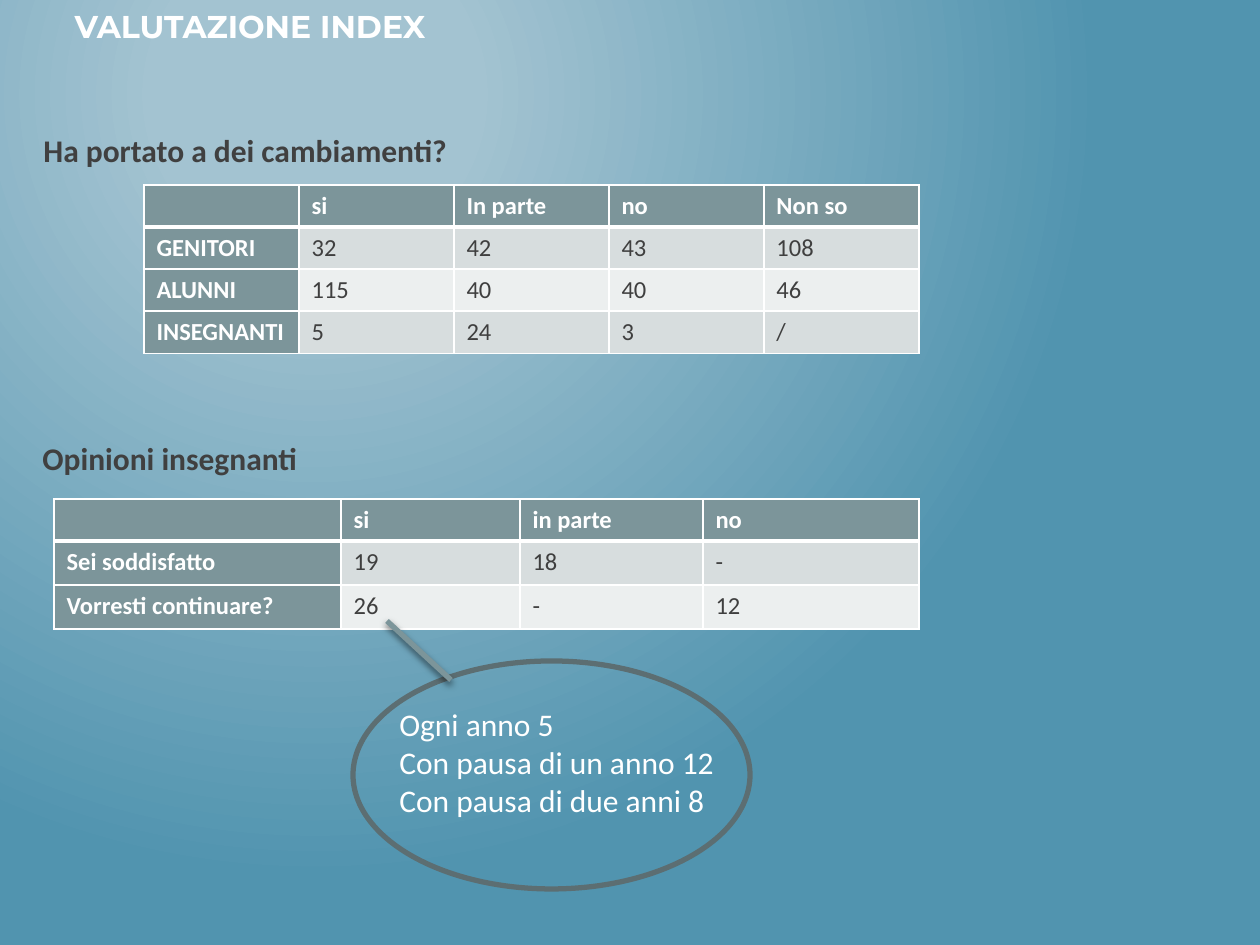
from dataclasses import dataclass

from lxml.etree import SubElement
from pptx import Presentation
from pptx.dml.color import RGBColor
from pptx.enum.shapes import MSO_CONNECTOR as Connector, MSO_SHAPE as Shape
from pptx.enum.text import MSO_ANCHOR as Anchor, PP_ALIGN as Align
from pptx.oxml.ns import qn
from pptx.util import Pt


@dataclass(frozen=True)
class Theme:
    title_font: str = "Montserrat"
    body_font: str = "Calibri"
    large: int = 18
    small: int = 14
    thin: int = 1
    thick: int = 3
    glow: str = "A3C3D1"
    backdrop: str = "5194AF"
    white: str = "FFFFFF"
    heading: str = "404040"
    value: str = "3F3F3F"
    header: str = "7C959A"
    bands: tuple = ("D7DDDE", "ECEFEF")
    outline: str = "5C6E72"
    shadow: str = "000000"


THEME = Theme()
PX = 914400 // 126
SLIDE_SIZE = (1260, 945)

TITLE = ("VALUTAZIONE INDEX", (62, 1, 1134, 113))
HEADINGS = [
    ("Ha portato a dei cambiamenti?", (31, 125, 1145, 263)),
    ("Opinioni insegnanti", (30, 433, 1145, 263)),
]
TABLES = [
    {
        "origin": (144, 185),
        "columns": [155] * 5,
        "rows": [42] * 4,
        "cells": [
            ["", "si", "In parte", "no", "Non so"],
            ["GENITORI", "32", "42", "43", "108"],
            ["ALUNNI", "115", "40", "40", "46"],
            ["INSEGNANTI", "5", "24", "3", "/"],
        ],
    },
    {
        "origin": (54, 499),
        "columns": [287, 179, 183, 216],
        "rows": [42, 44, 44],
        "cells": [
            ["", "si", "in parte", "no"],
            ["Sei soddisfatto", "19", "18", "-"],
            ["Vorresti continuare?", "26", "-", "12"],
        ],
    },
]
CALLOUT = (
    "Ogni anno 5\nCon pausa di un anno 12\nCon pausa di due anni 8",
    (387, 699, 367, 127),
)
ELLIPSE = (353, 661, 397, 228)
POINTER = (451, 680, 387, 621)


def emu(lengths):
    return [length * PX for length in lengths]


def rgb(color):
    return RGBColor.from_string(color)


def write(frame, text, size, color, bold=False, font=THEME.body_font):
    frame.text = text
    for para in frame.paragraphs:
        para.alignment = Align.LEFT
        for span in para.runs:
            span.font.name = font
            span.font.size = Pt(size)
            span.font.bold = bold
            span.font.color.rgb = rgb(color)


def paint_background(page):
    fill = page.background.fill
    fill.gradient()
    stops = zip(fill.gradient_stops, (0.2, 1), (THEME.glow, THEME.backdrop))
    for stop, position, color in stops:
        stop.position = position
        stop.color.rgb = rgb(color)
    gradient = next(page.element.iter(qn("a:gradFill")))
    gradient.remove(gradient.find(qn("a:lin")))
    circle = SubElement(gradient, qn("a:path"), path="circle")
    SubElement(circle, qn("a:fillToRect"), l="50000", t="20000", r="100000", b="100000")


def add_title(page, text, place):
    title = page.shapes.title
    title.left, title.top, title.width, title.height = emu(place)
    frame = title.text_frame
    frame.vertical_anchor = Anchor.TOP
    write(frame, text, THEME.large, THEME.white, True, THEME.title_font)


def add_text(page, text, place, color, bold=False):
    box = page.shapes.add_textbox(*emu(place))
    box.text_frame.word_wrap = True
    write(box.text_frame, text, THEME.large, color, bold)


def add_borders(cell, row):
    widths = {
        "lnL": THEME.thin,
        "lnR": THEME.thin,
        "lnT": THEME.thick if row == 1 else THEME.thin,
        "lnB": THEME.thick if row == 0 else THEME.thin,
    }
    properties = cell._tc.get_or_add_tcPr()
    for side, width in widths.items():
        line = SubElement(properties, qn(f"a:{side}"), w=str(Pt(width)))
        fill = SubElement(line, qn("a:solidFill"))
        SubElement(fill, qn("a:srgbClr"), val=THEME.white)


def add_table(page, origin, columns, rows, cells):
    place = emu((*origin, sum(columns), sum(rows)))
    table = page.shapes.add_table(len(rows), len(columns), *place).table
    for column, width in zip(table.columns, emu(columns)):
        column.width = width
    for row, height in zip(table.rows, emu(rows)):
        row.height = height
    for r, texts in enumerate(cells):
        for c, text in enumerate(texts):
            cell = table.cell(r, c)
            label = r == 0 or c == 0
            color = THEME.white if label else THEME.value
            write(cell.text_frame, text, THEME.small, color, label)
            if not text:
                para = cell.text_frame.paragraphs[0]
                SubElement(para._p, qn("a:endParaRPr"), sz=str(THEME.small * 100))
            add_borders(cell, r)
            cell.fill.solid()
            band = THEME.bands[(r - 1) % 2]
            cell.fill.fore_color.rgb = rgb(THEME.header if label else band)


def add_ellipse(page, place):
    ellipse = page.shapes.add_shape(Shape.OVAL, *emu(place))
    ellipse.shadow.inherit = False
    ellipse.fill.background()
    ellipse.line.color.rgb = rgb(THEME.outline)
    ellipse.line.width = Pt(THEME.thick)


def add_pointer(page, ends):
    pointer = page.shapes.add_connector(Connector.STRAIGHT, *emu(ends))
    pointer.line.color.rgb = rgb(THEME.header)
    pointer.line.width = Pt(THEME.thick)
    effects = SubElement(pointer._element.spPr, qn("a:effectLst"))
    shadow = SubElement(
        effects, qn("a:outerShdw"), blurRad=str(Pt(4)), dist=str(Pt(2)), dir="5400000"
    )
    color = SubElement(shadow, qn("a:srgbClr"), val=THEME.shadow)
    SubElement(color, qn("a:alpha"), val="55000")


def main():
    deck = Presentation()
    deck.slide_width, deck.slide_height = emu(SLIDE_SIZE)
    page = deck.slides.add_slide(deck.slide_layouts[5])
    paint_background(page)
    add_title(page, *TITLE)
    for (text, place), table in zip(HEADINGS, TABLES):
        add_text(page, text, place, THEME.heading, True)
        add_table(page, **table)
    add_text(page, *CALLOUT, THEME.white)
    add_ellipse(page, ELLIPSE)
    add_pointer(page, POINTER)
    deck.save("out.pptx")


if __name__ == "__main__":
    main()
